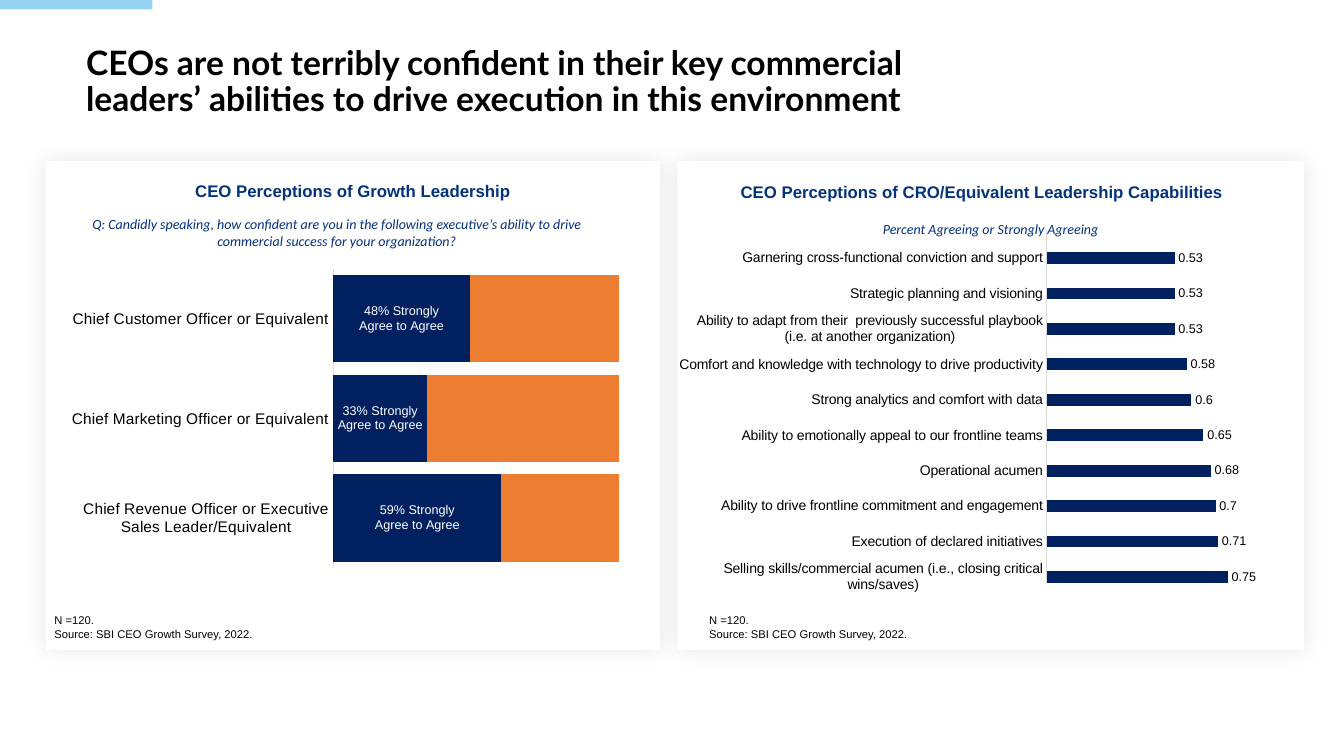
from dataclasses import dataclass

from lxml import etree
from pptx import Presentation
from pptx.chart.data import CategoryChartData
from pptx.dml.color import RGBColor
from pptx.enum.chart import XL_CHART_TYPE, XL_LABEL_POSITION, XL_TICK_LABEL_POSITION, XL_TICK_MARK
from pptx.enum.shapes import MSO_SHAPE
from pptx.enum.text import MSO_ANCHOR, PP_ALIGN
from pptx.oxml import parse_xml
from pptx.oxml.ns import qn
from pptx.util import Cm, Pt

STACKED, CLUSTERED = XL_CHART_TYPE.BAR_STACKED, XL_CHART_TYPE.BAR_CLUSTERED
LEFT, CENTER = PP_ALIGN.LEFT, PP_ALIGN.CENTER
TOP, MIDDLE, BOTTOM = MSO_ANCHOR.TOP, MSO_ANCHOR.MIDDLE, MSO_ANCHOR.BOTTOM
INSIDE, OUTSIDE = XL_LABEL_POSITION.CENTER, XL_LABEL_POSITION.OUTSIDE_END
NO_TICK, BESIDE_AXIS = XL_TICK_MARK.NONE, XL_TICK_LABEL_POSITION.NEXT_TO_AXIS

TITLE = ("CEOs are not terribly confident in their key commercial leaders’ "
         "abilities to drive execution in this environment")
SOURCE = ["N =120.", "Source: SBI CEO Growth Survey, 2022."]
PANELS = [
    {"card": (1.15, 4.06, 15.49, 12.32),
     "heading": ("CEO Perceptions of Growth Leadership", (1.15, 4.03, 15.49, 1.57)),
     "question": ("Q: Candidly speaking, how confident are you in the following executive’s "
                  "ability to drive commercial success for your organization?",
                  (1.97, 5.44, 13.03, 0.94), (0, 0)),
     "source": (1.37, 15.46, 5.89, 0.69)},
    {"card": (17.07, 4.06, 15.8, 12.32),
     "heading": ("CEO Perceptions of CRO/Equivalent Leadership Capabilities",
                 (18.04, 4.36, 13.41, 0.97)),
     "question": ("Percent Agreeing or Strongly Agreeing", (21.14, 5.43, 7.65, 0.71), (0.25, 0.13)),
     "source": (17.87, 15.46, 5.89, 0.69)},
]
CONFIDENCE = [
    ("Chief Revenue Officer or Executive Sales Leader/Equivalent", 0.59),
    ("Chief Marketing Officer or Equivalent", 0.33),
    ("Chief Customer Officer or Equivalent", 0.48),
]
CAPABILITIES = [
    ("Selling skills/commercial acumen (i.e., closing critical wins/saves)", 0.75),
    ("Execution of declared initiatives", 0.71),
    ("Ability to drive frontline commitment and engagement", 0.7),
    ("Operational acumen", 0.68),
    ("Ability to emotionally appeal to our frontline teams", 0.65),
    ("Strong analytics and comfort with data", 0.6),
    ("Comfort and knowledge with technology to drive productivity", 0.58),
    ("Ability to adapt from their  previously successful playbook (i.e. at another organization)", 0.53),
    ("Strategic planning and visioning", 0.53),
    ("Garnering cross-functional conviction and support", 0.53),
]
BLANK_ROWS = 2


@dataclass(frozen=True)
class Theme:
    """Colours, fonts and type sizes of the slide."""
    black: str = "000000"
    white: str = "FFFFFF"
    sky: str = "95D3F3"
    blue: str = "03327C"
    navy: str = "002060"
    orange: str = "ED7D31"
    axis: str = "D9D9D9"
    title_font: str = "Lato"
    body_font: str = "Arial"
    question_font: str = "Calibri"
    title: int = 24
    heading: int = 12
    question: int = 10
    confidence_axis: int = 11
    capability_axis: int = 10
    label: int = 9
    source: int = 8


THEME = Theme()


def set_font(font, face, size, color, bold=False, italic=False):
    """Apply face, size, colour and style to a font."""
    font.name, font.size, font.bold, font.italic = face, Pt(size), bold, italic
    font.color.rgb = RGBColor.from_string(color)


def place(box):
    """Turn centimetre numbers into lengths."""
    return [Cm(length) for length in box]


def write(frame, lines, align, anchor, insets, *style):
    """Fill a text frame with one paragraph per line."""
    frame.word_wrap = True
    frame.vertical_anchor = anchor
    frame.margin_left = frame.margin_right = Cm(insets[0])
    frame.margin_top = frame.margin_bottom = Cm(insets[1])
    frame.text = "\n".join(lines)
    for paragraph in frame.paragraphs:
        paragraph.alignment = align
        for run in paragraph.runs:
            set_font(run.font, *style)


def add_block(slide, box, color):
    """Add a plain filled rectangle."""
    block = slide.shapes.add_shape(MSO_SHAPE.RECTANGLE, *place(box))
    block.shadow.inherit = False
    block.fill.solid()
    block.fill.fore_color.rgb = RGBColor.from_string(color)
    block.line.fill.background()
    return block


def add_card(slide, box):
    """Add a white card with a soft shadow."""
    card = add_block(slide, box, THEME.white)
    glow = etree.SubElement(card.element.spPr.find(qn("a:effectLst")), qn("a:outerShdw"),
                            blurRad=str(Pt(15)), dist="0", dir="0", algn="ctr", rotWithShape="0")
    shade = etree.SubElement(glow, qn("a:srgbClr"), val=THEME.black)
    etree.SubElement(shade, qn("a:alpha"), val="10000")


def add_bars(slide, kind, box, categories, series, plot_area, gap, overlap, axis_size, number_format):
    """Add a bar chart with a hidden value axis and return its plot."""
    data = CategoryChartData(number_format=number_format)
    data.categories = categories
    for name, values, _ in series:
        data.add_series(name, values)
    chart = slide.shapes.add_chart(kind, *place(box), data).chart
    chart.has_legend = chart.has_title = False
    set_font(chart.font, THEME.body_font, axis_size, THEME.black)
    names, scale = chart.category_axis, chart.value_axis
    names.major_tick_mark = names.minor_tick_mark = NO_TICK
    names.tick_label_position = BESIDE_AXIS
    names.format.line.color.rgb = RGBColor.from_string(THEME.axis)
    names.format.line.width = Pt(0.75)
    set_font(names.tick_labels.font, THEME.body_font, axis_size, THEME.black)
    scale.minimum_scale, scale.maximum_scale = 0, 1
    scale.has_major_gridlines = scale.visible = False
    scale.tick_labels.number_format = number_format
    plot = chart.plots[0]
    plot.gap_width, plot.overlap, plot.vary_by_categories = gap, overlap, False
    for bars, (_, _, color) in zip(plot.series, series):
        bars.format.fill.solid()
        bars.format.fill.fore_color.rgb = RGBColor.from_string(color)
    spots = "".join(f'<c:{key} val="{share}"/>' for key, share in zip("xywh", plot_area))
    area = chart.element.chart.plotArea
    for old in area.findall(qn("c:layout")):
        area.remove(old)
    area.insert(0, parse_xml(
        '<c:layout xmlns:c="http://schemas.openxmlformats.org/drawingml/2006/chart"><c:manualLayout>'
        '<c:layoutTarget val="inner"/><c:xMode val="edge"/><c:yMode val="edge"/>'
        f'{spots}</c:manualLayout></c:layout>'))
    return plot


def label_bars(bars, position, color, bold=False):
    """Show values on a series."""
    labels = bars.data_labels
    labels.show_value, labels.position = True, position
    set_font(labels.font, THEME.body_font, THEME.label, color, bold)
    return labels


def add_confidence(slide):
    """Add the stacked chart of confidence by executive."""
    roles, agree = zip(*CONFIDENCE)
    rest = [round(1 - share, 2) for share in agree]
    plot = add_bars(slide, STACKED, (1.37, 6.41, 14.22, 8.26), roles,
                    [("% Agree", agree, THEME.navy), ("Series 2", rest, THEME.orange)],
                    (0.494, 0.044, 0.506, 0.913), 14, 100, THEME.confidence_axis, "0%")
    label_bars(plot.series[0], INSIDE, THEME.white, True).show_series_name = True
    for point, share in enumerate(agree):
        label = plot.series[0].points[point].data_label
        label.text_frame.text = f"{share:.0%} Strongly Agree to Agree"
        label.position = INSIDE
        set_font(label.text_frame.paragraphs[0].runs[0].font,
                 THEME.body_font, THEME.label, THEME.white)


def add_capabilities(slide):
    """Add the bar chart of capabilities, spaced by blank rows."""
    names, shares = [], []
    for name, share in CAPABILITIES:
        names += [name] + [""] * BLANK_ROWS
        shares += [share] + [None] * BLANK_ROWS
    plot = add_bars(slide, CLUSTERED, (17.07, 5.56, 15.7, 9.55), names[:-BLANK_ROWS],
                    [("Series 1", shares, THEME.navy)],
                    (0.593, 0.021, 0.387, 0.935), 0, -71, THEME.capability_axis, "General")
    label_bars(plot.series[0], OUTSIDE, THEME.black)


def main():
    """Build the slide and save it."""
    deck = Presentation()
    deck.slide_width, deck.slide_height = Cm(33.87), Cm(19.05)
    slide = deck.slides.add_slide(deck.slide_layouts[5])
    add_block(slide, (0, 0, 3.84, 0.24), THEME.sky)
    title = slide.shapes.title
    title.left, title.top, title.width, title.height = place((2.17, 1.98, 22.89, 1.02))
    write(title.text_frame, [TITLE], LEFT, BOTTOM, (0, 0), THEME.title_font, THEME.title, THEME.black, True)
    title.text_frame.paragraphs[0].line_spacing = 0.9
    for panel in PANELS:
        add_card(slide, panel["card"])
        heading, heading_box = panel["heading"]
        question, question_box, insets = panel["question"]
        write(slide.shapes.add_textbox(*place(panel["source"])).text_frame, SOURCE, LEFT, TOP, (0, 0),
              THEME.body_font, THEME.source, THEME.black)
        write(add_block(slide, question_box, THEME.white).text_frame, [question], CENTER, TOP, insets,
              THEME.question_font, THEME.question, THEME.blue, False, True)
        write(slide.shapes.add_textbox(*place(heading_box)).text_frame, [heading], CENTER, MIDDLE,
              (0.51, 0.2), THEME.body_font, THEME.heading, THEME.blue, True)
    add_confidence(slide)
    add_capabilities(slide)
    deck.save("out.pptx")


if __name__ == "__main__":
    main()
